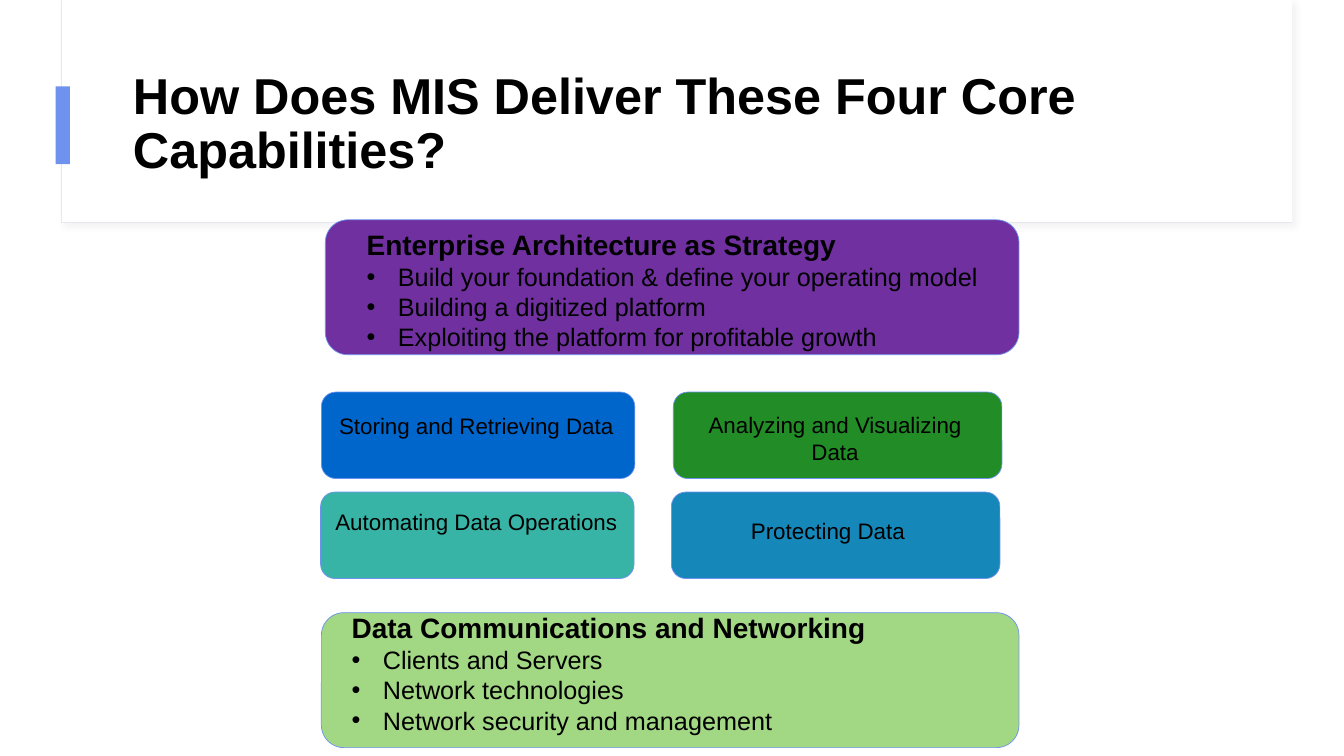
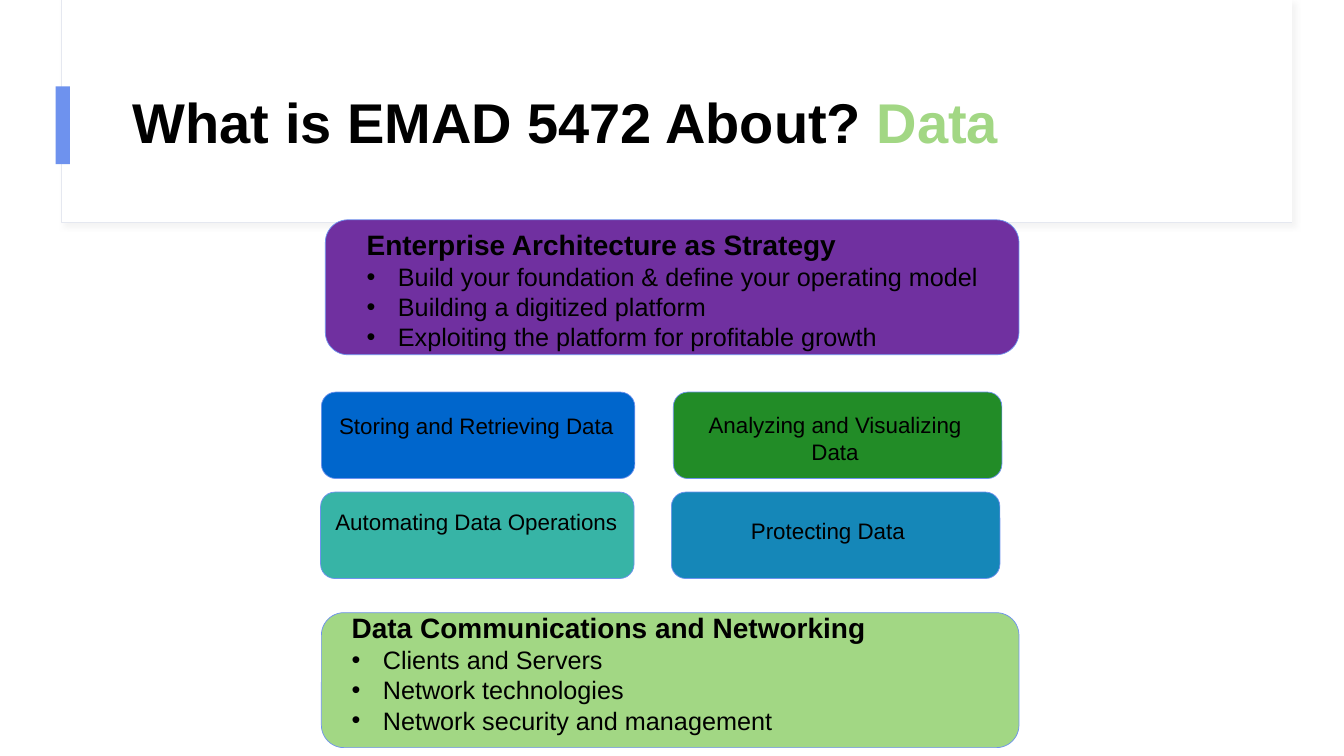
import pptx
import pptx.util
import pptx.dml.color
import pptx.enum.shapes
import pptx.enum.text
import pptx.oxml
import pptx.oxml.ns

Cm, Pt = pptx.util.Cm, pptx.util.Pt
SHAPES = pptx.enum.shapes.MSO_SHAPE
ALIGN = pptx.enum.text.PP_ALIGN
ANCHOR = pptx.enum.text.MSO_ANCHOR

BLACK, WHITE, ACCENT, LIGHT_GREEN = "000000", "FFFFFF", "6E92EE", "A2D784"
BULLET_INDENT = Cm(0.79)
FRAME_SHADOW = (
    '<a:effectLst %s><a:outerShdw blurRad="50800" dist="38100" dir="2700000">'
    '<a:srgbClr val="D9D9D9"><a:alpha val="30000"/></a:srgbClr>'
    '</a:outerShdw></a:effectLst>' % pptx.oxml.ns.nsdecls("a"))

# Content: title runs and size for each slide
titles = [
    (36, [("How Does MIS Deliver These Four Core Capabilities?", BLACK)]),
    (40, [("What is EMAD 5472 About? ", BLACK), ("Data", LIGHT_GREEN)]),
]

# Panels: box, fill, text box, heading, bullets (cm)
panels = [
    ((8.2, 5.54, 17.48, 3.4), "7030A0", (8.99, 5.61, 17.48, 3.43),
     "Enterprise Architecture as Strategy",
     ["Build your foundation & define your operating model",
      "Building a digitized platform",
      "Exploiting the platform for profitable growth"]),
    ((8.1, 15.44, 17.58, 3.4), LIGHT_GREEN, (8.61, 15.27, 15.77, 3.43),
     "Data Communications and Networking",
     ["Clients and Servers", "Network technologies",
      "Network security and management"]),
]

# Capabilities: box, fill, left and top of the label, label
capabilities = [
    ((8.1, 9.88, 7.9, 2.18), "0066CC", (8.08, 10.26), "Storing and Retrieving Data"),
    ((16.97, 9.88, 8.28, 2.18), "228C27", (17.12, 10.24), "Analyzing and Visualizing Data"),
    ((8.08, 12.4, 7.9, 2.18), "37B4A6", (8.08, 12.67), "Automating Data Operations"),
    ((16.92, 12.4, 8.28, 2.18), "1587B8", (16.94, 12.9), "Protecting Data"),
]


def add_box(slide, kind, place, fill, line=None, line_width=0.5):
    """Draw a filled shape without shadow; place is in cm."""
    box = slide.shapes.add_shape(kind, *map(Cm, place))
    box.shadow.inherit = False
    box.fill.solid()
    box.fill.fore_color.rgb = pptx.dml.color.RGBColor.from_string(fill)
    if line:
        box.line.color.rgb = pptx.dml.color.RGBColor.from_string(line)
        box.line.width = Pt(line_width)
    else:
        box.line.fill.background()
    return box


def add_text(slide, place, paragraphs):
    """Add a wrapping text box; each paragraph is (runs, size, bold)."""
    frame = slide.shapes.add_textbox(*map(Cm, place)).text_frame
    frame.word_wrap = True
    frame.text = "\n".join("" for _ in paragraphs)
    for paragraph, (runs, size, bold) in zip(frame.paragraphs, paragraphs):
        for words, color in runs:
            run = paragraph.add_run()
            run.text = words
            run.font.name = "Arial"
            run.font.size = Pt(size)
            run.font.bold = bold
            run.font.color.rgb = pptx.dml.color.RGBColor.from_string(color)
    return frame


deck = pptx.Presentation()
deck.slide_width, deck.slide_height = Cm(33.87), Cm(19.05)

for title_size, title_runs in titles:
    slide = deck.slides.add_slide(deck.slide_layouts[6])

    # Header frame and accent bar
    frame = add_box(slide, SHAPES.RECTANGLE, (1.55, 0, 31.01, 5.61), WHITE, "E5E8F0", 0.75)
    properties = frame.fill._xPr
    properties.replace(properties.find(pptx.oxml.ns.qn("a:effectLst")),
                       pptx.oxml.parse_xml(FRAME_SHADOW))
    add_box(slide, SHAPES.RECTANGLE, (1.57, 0, 30.99, 5.59), WHITE)
    add_box(slide, SHAPES.RECTANGLE, (1.4, 2.18, 0.36, 1.96), ACCENT)

    # Title
    title = add_text(slide, (3.1, 1.52, 28.24, 3.28), [(title_runs, title_size, True)])
    title.vertical_anchor = ANCHOR.MIDDLE
    title.paragraphs[0].line_spacing = 0.9

    # Strategy and networking panels
    for place, fill, text_place, heading, bullets in panels:
        add_box(slide, SHAPES.ROUNDED_RECTANGLE, place, fill, ACCENT)
        lines = [([(heading, BLACK)], 20, True)]
        lines += [([(bullet, BLACK)], 18, False) for bullet in bullets]
        panel_text = add_text(slide, text_place, lines)
        for paragraph in panel_text.paragraphs[1:]:
            settings = paragraph._p.get_or_add_pPr()
            settings.set("marL", str(BULLET_INDENT))
            settings.set("indent", str(-BULLET_INDENT))
            settings.append(pptx.oxml.parse_xml(
                '<a:buFont %s typeface="Arial"/>' % pptx.oxml.ns.nsdecls("a")))
            settings.append(pptx.oxml.parse_xml(
                '<a:buChar %s char="•"/>' % pptx.oxml.ns.nsdecls("a")))

    # Four core capabilities
    for place, fill, corner, label in capabilities:
        add_box(slide, SHAPES.ROUNDED_RECTANGLE, place, fill, ACCENT)
        label_text = add_text(slide, (*corner, 7.85, 1.63), [([(label, BLACK)], 16, False)])
        label_text.paragraphs[0].alignment = ALIGN.CENTER

deck.save("out.pptx")
